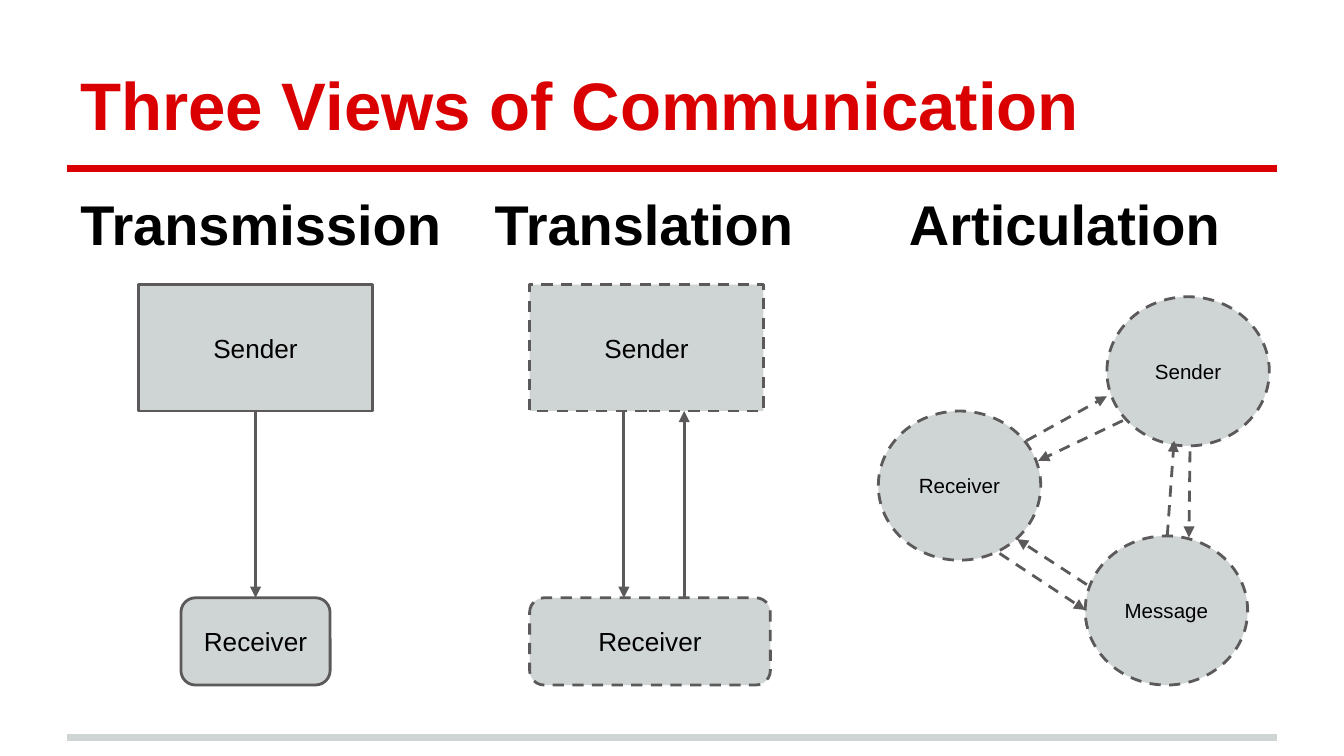
from lxml import etree
from pptx import Presentation
from pptx.dml.color import RGBColor
from pptx.enum import dml, shapes, text
from pptx.oxml.ns import qn
from pptx.util import Cm, Pt

RED, GREY, DARK, BLACK = "DA0002", "CFD4D4", "5B595A", "000000"
FONT = "Arial"
RECT = shapes.MSO_SHAPE.RECTANGLE
ROUND = shapes.MSO_SHAPE.ROUNDED_RECTANGLE
OVAL = shapes.MSO_SHAPE.OVAL
TOP, BOTTOM = 0, 2  # connection sites


def rgb(value):
    return RGBColor.from_string(value)


def set_text(sp, words, size, color=BLACK, bold=False,
             align=text.PP_ALIGN.LEFT, anchor=text.MSO_ANCHOR.TOP):
    tf = sp.text_frame
    tf.text = words
    tf.word_wrap = True
    tf.auto_size = text.MSO_AUTO_SIZE.NONE
    tf.vertical_anchor = anchor
    tf.margin_left = tf.margin_right = tf.margin_top = tf.margin_bottom = Cm(0.25)
    p = tf.paragraphs[0]
    p.alignment = align
    p.font.name, p.font.size, p.font.bold = FONT, Pt(size), bold
    p.font.color.rgb = rgb(color)


def set_line(line, color=DARK, width=1.5, dashed=False):
    line.color.rgb = rgb(color)
    line.width = Pt(width)
    if dashed:
        line.dash_style = dml.MSO_LINE.DASH


def add_node(slide, kind, words, box, size=14, dashed=False):
    sp = slide.shapes.add_shape(kind, *map(Cm, box))
    sp.shadow.inherit = False
    sp.fill.solid()
    sp.fill.fore_color.rgb = rgb(GREY)
    set_line(sp.line, dashed=dashed)
    set_text(sp, words, size, align=text.PP_ALIGN.CENTER,
             anchor=text.MSO_ANCHOR.MIDDLE)
    return sp


def add_line(slide, x1, y1, x2, y2, color=DARK, width=1.5, dashed=False):
    line = slide.shapes.add_connector(
        shapes.MSO_CONNECTOR.STRAIGHT, *map(Cm, (x1, y1, x2, y2)))
    set_line(line.line, color, width, dashed)
    etree.SubElement(line._element.spPr, qn("a:effectLst"))
    return line


def add_arrow(slide, x1, y1, x2, y2, dashed=False):
    line = add_line(slide, x1, y1, x2, y2, dashed=dashed)
    etree.SubElement(line.line._get_or_add_ln(), qn("a:tailEnd"), type="triangle")
    return line


def add_heading(slide, words, x, y, w):
    set_text(slide.shapes.add_textbox(Cm(x), Cm(y), Cm(w), Cm(1.9)),
             words, 30, bold=True)


def add_frame(slide, x, y, w, h):
    """Title with the rule below it, and the rule at the foot."""
    title = slide.shapes.title
    title.left, title.top, title.width, title.height = map(Cm, (x, y, w, 2.4))
    set_text(title, "Three Views of Communication", 36, RED, True,
             anchor=text.MSO_ANCHOR.BOTTOM)
    for line_y, color in ((y + 2.6, RED), (y + h, GREY)):
        add_line(slide, x, line_y, x + w, line_y, color, 4)


def add_transmission(slide, x, y, w):
    add_heading(slide, "Transmission", x, y, w)
    sender = add_node(slide, RECT, "Sender", (x + 1.35, y + 2.05, 4.42, 2.39))
    receiver = add_node(slide, ROUND, "Receiver", (x + 2.15, y + 7.97, 2.82, 1.65))
    arrow = add_arrow(slide, x + 3.56, y + 4.44, x + 3.56, y + 7.97)
    arrow.begin_connect(sender, BOTTOM)
    arrow.end_connect(receiver, TOP)


def add_translation(slide, x, y, w):
    add_heading(slide, "Translation", x, y, w)
    upper, lower = y + 4.44, y + 7.97
    add_node(slide, RECT, "Sender", (x + 0.91, y + 2.05, 4.42, 2.39), dashed=True)
    add_node(slide, ROUND, "Receiver", (x + 0.91, lower, 4.55, 1.65), dashed=True)
    add_arrow(slide, x + 2.69, upper, x + 2.69, lower)
    add_arrow(slide, x + 3.83, lower, x + 3.83, upper)


def add_articulation(slide, x, y, w):
    add_heading(slide, "Articulation", x, y, w)
    for words, dx, dy in (("Receiver", -0.33, 4.44),
                          ("Sender", 3.99, 2.28),
                          ("Message", 3.58, 6.8)):
        add_node(slide, OVAL, words, (x + dx, y + dy, 3.07, 2.82), 11, True)
    for x1, y1, x2, y2 in (
            (2.47, 5.0, 3.99, 4.16),   # receiver to sender
            (4.29, 4.62, 2.69, 5.38),  # sender to receiver
            (1.96, 7.13, 3.58, 8.2),   # receiver to message
            (3.61, 7.72, 2.29, 6.86),  # message to receiver
            (5.13, 6.8, 5.26, 5.0),    # message to sender
            (5.56, 5.2, 5.54, 6.83)):  # sender to message
        add_arrow(slide, x + x1, y + y1, x + x2, y + y2, dashed=True)


def main():
    prs = Presentation()
    prs.slide_width, prs.slide_height = Cm(25.4), Cm(14.29)
    slide = prs.slides.add_slide(prs.slide_layouts[5])
    left = 1.27
    add_frame(slide, left, 0.58, 22.86, 13.36)
    # Three columns at an equal pitch
    views = (add_transmission, add_translation, add_articulation)
    for i, add_view in enumerate(views):
        add_view(slide, left + i * 7.83, 3.33, 7.67)
    prs.save("out.pptx")


if __name__ == "__main__":
    main()
